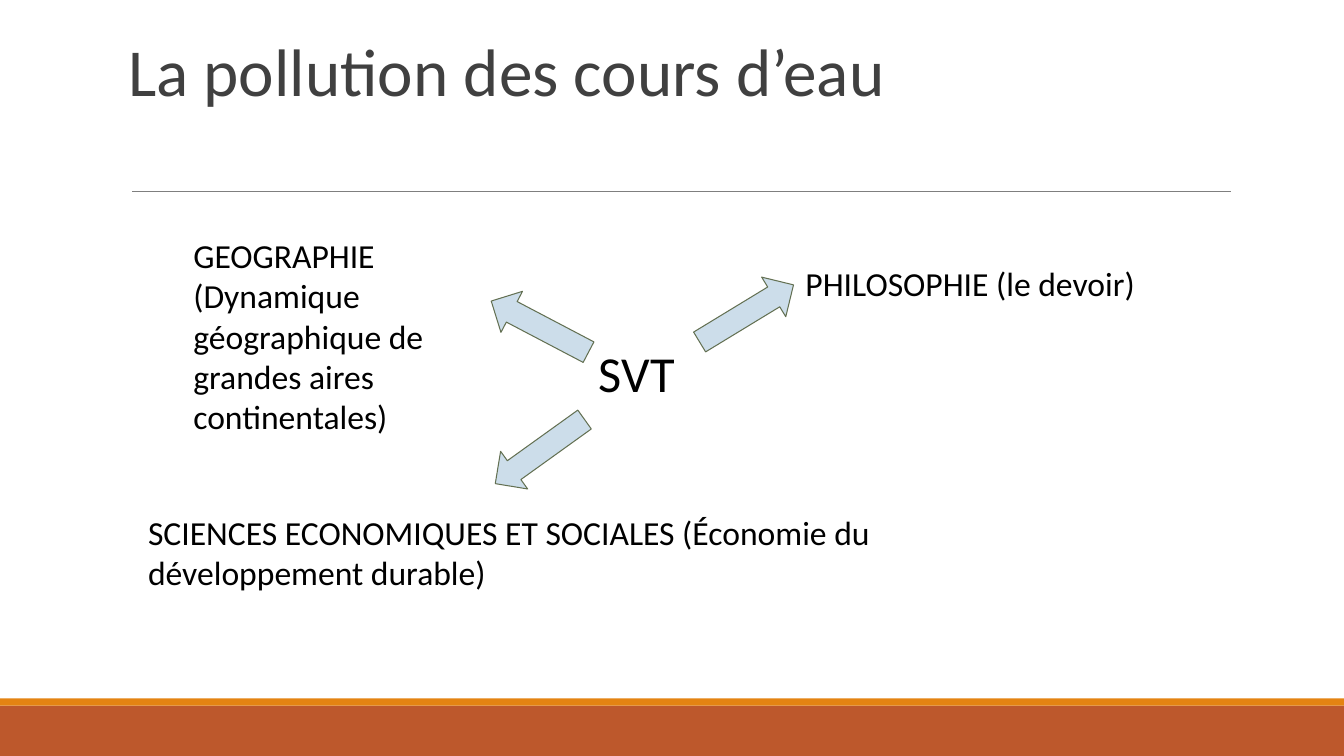
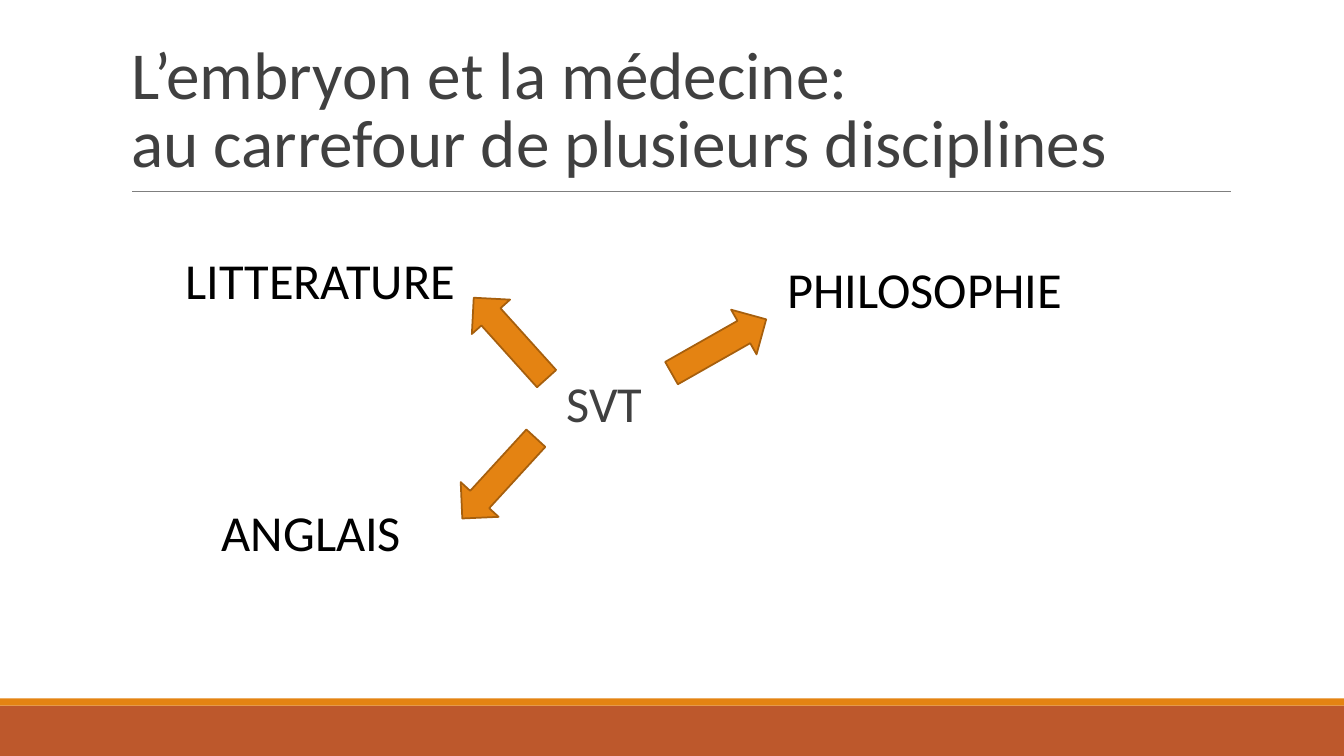
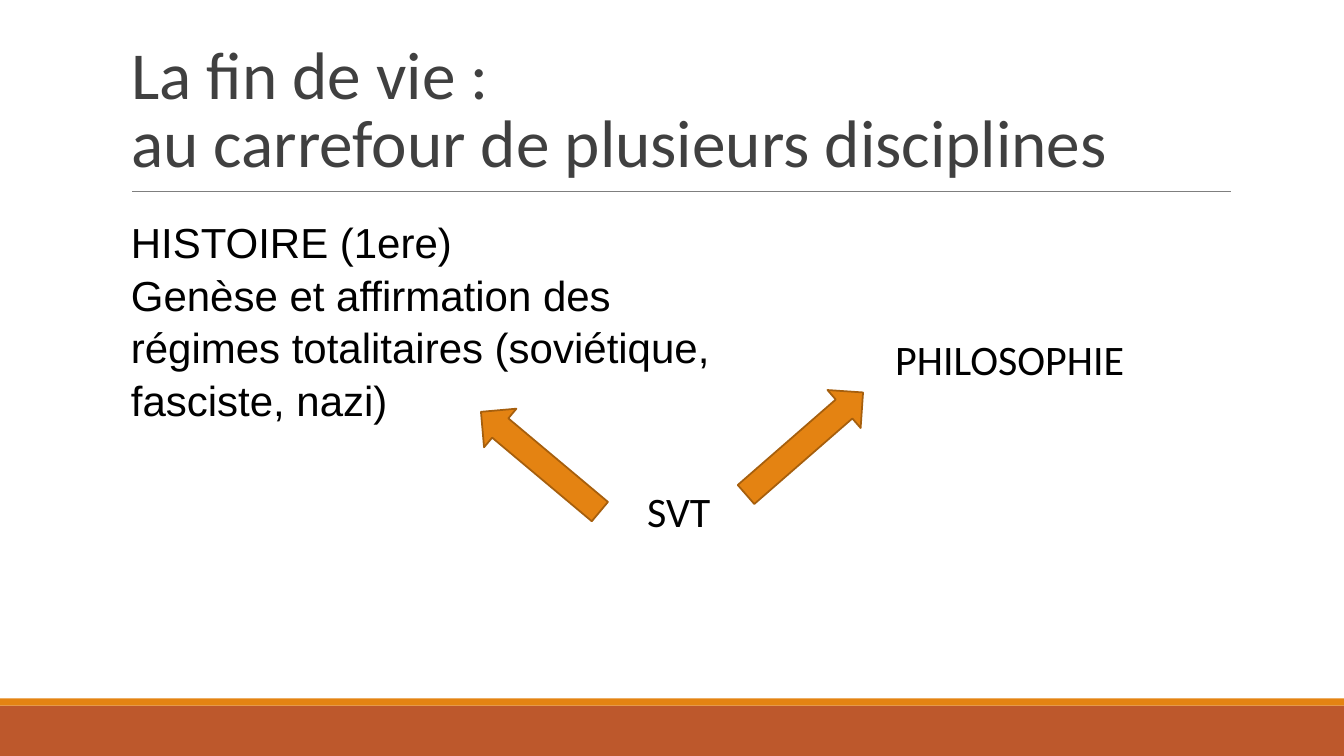
from dataclasses import dataclass

from pptx import Presentation
from pptx.dml.color import RGBColor
from pptx.enum.shapes import MSO_CONNECTOR, MSO_SHAPE
from pptx.enum.text import MSO_ANCHOR, MSO_AUTO_SIZE, PP_ALIGN
from pptx.oxml.ns import qn
from pptx.util import Inches, Pt
from lxml.etree import SubElement


@dataclass(frozen=True)
class Theme:
    rust: str = "BD582C"
    orange: str = "E48312"
    orange_edge: str = "A65F0D"
    pale_blue: str = "CCDDEA"
    green_edge: str = "637052"
    rule: str = "7F7F7F"
    title: str = "404040"
    text: str = "000000"
    font: str = "Calibri"
    plain_font: str = "Arial"
    title_size: int = 48
    large: int = 36
    medium: int = 30
    small: int = 24
    inset: float = 0.1


@dataclass(frozen=True)
class Box:
    left: float
    top: float
    width: float
    height: float

    def inside(self, left, top, width, height):
        return Box(self.left + left, self.top + top, width, height)

    def lengths(self):
        return [Inches(v) for v in (self.left, self.top, self.width, self.height)]


@dataclass(frozen=True)
class Label:
    lines: tuple
    place: tuple
    size: int
    color: str = Theme.text
    font: str = Theme.font
    spacing: float = 1.0


@dataclass(frozen=True)
class Arrows:
    size: tuple
    fill: str
    edge: str
    weight: float
    places: tuple  # left, top, rotation


THEME = Theme()
SLIDE = Box(0, 0, 13.33, 7.5)
TITLE = Box(1.2, 0.31, 11, 1.59)
CONTENT = Box(1.2, 2, 11, 4.4)


def set_all(target, values):
    for name, value in values.items():
        setattr(target, name, value)


def color(code):
    return RGBColor.from_string(code)


# Text
def write(frame, lines, size, ink, font, spacing, anchor=MSO_ANCHOR.TOP):
    inset = Inches(THEME.inset)
    set_all(frame, {
        "word_wrap": True, "auto_size": MSO_AUTO_SIZE.NONE, "vertical_anchor": anchor,
        "margin_left": inset, "margin_right": inset,
        "margin_top": inset, "margin_bottom": inset,
    })
    for number, line in enumerate(lines):
        para = frame.add_paragraph() if number else frame.paragraphs[0]
        set_all(para, {"alignment": PP_ALIGN.LEFT, "line_spacing": spacing,
                       "space_before": Pt(0), "space_after": Pt(0)})
        span = para.add_run()
        span.text = line
        set_all(span.font, {"name": font, "size": Pt(size)})
        span.font.color.rgb = color(ink)


def add_label(page, area, label):
    shape = page.shapes.add_textbox(*area.inside(*label.place).lengths())
    write(shape.text_frame, label.lines, label.size, label.color, label.font, label.spacing)


def set_title(page, lines, box):
    title = page.shapes.title
    set_all(title, dict(zip(("left", "top", "width", "height"), box.lengths())))
    write(title.text_frame, lines, THEME.title_size, THEME.title, THEME.font, 0.85,
          MSO_ANCHOR.BOTTOM)


# Shapes
def add_filled(page, kind, box, fill):
    shape = page.shapes.add_shape(kind, *box.lengths())
    shape.shadow.inherit = False
    shape.fill.solid()
    shape.fill.fore_color.rgb = color(fill)
    shape.line.fill.background()
    return shape


def add_arrows(page, area, arrows):
    for left, top, rotation in arrows.places:
        arrow = add_filled(page, MSO_SHAPE.RIGHT_ARROW,
                           area.inside(left, top, *arrows.size), arrows.fill)
        arrow.rotation = rotation
        arrow.line.color.rgb = color(arrows.edge)
        arrow.line.width = Pt(arrows.weight)


# Shared bands and title rule, kept on the layout
def add_frame(page, box):
    layout = page.slide_layout
    for holder in list(layout.placeholders)[1:]:
        layout.shapes.element.remove(holder.element)
    parts = [add_filled(page, MSO_SHAPE.RECTANGLE, box.inside(0, top, box.width, height), fill)
             for top, height, fill in ((7, 0.5, THEME.rust), (6.93, 0.07, THEME.orange))]
    rule = page.shapes.add_connector(MSO_CONNECTOR.STRAIGHT, Inches(1.31), Inches(1.9),
                                     Inches(12.21), Inches(1.9))
    rule.line.color.rgb = color(THEME.rule)
    rule.line.width = Pt(0.75)
    SubElement(rule.element.spPr, qn("a:effectLst"))
    for part in parts + [rule]:
        layout.shapes.element.append(part.element)


# One slide: a title above a subject with arrows to its neighbours
def add_crossroads(page, title, labels, arrows, title_box=TITLE, area=CONTENT):
    set_title(page, title, title_box)
    for label in labels:
        add_label(page, area, label)
    add_arrows(page, area, arrows)


def orange_arrows(size, places):
    return Arrows(size, THEME.orange, THEME.orange_edge, 1.25, places)


CROSSROADS = "au carrefour de plusieurs disciplines"

SLIDES = (
    dict(
        title=("La pollution des cours d’eau",),
        title_box=Box(1.17, 0.32, 11, 0.87),
        labels=(
            Label(("SVT",), (4.64, 1.29, 1.2, 0.93), THEME.large),
            Label(("PHILOSOPHIE (le devoir)",), (6.69, 0.51, 5, 0.93), THEME.small),
            Label(("SCIENCES ECONOMIQUES ET SOCIALES (Économie du développement durable)",),
                  (0.17, 2.98, 7.97, 0.93), THEME.small),
            Label(("GEOGRAPHIE", "(Dynamique géographique de grandes aires continentales)"),
                  (0.62, 0.23, 2.7, 2.2), THEME.small),
        ),
        arrows=Arrows((1.09, 0.46), THEME.pale_blue, THEME.green_edge, 0.75,
                      ((3.61, 2.25, 144.3), (5.66, 0.88, 328.7), (3.61, 1.01, 207.7))),
    ),
    dict(
        title=("L’embryon et la médecine:", CROSSROADS),
        labels=(
            Label(("PHILOSOPHIE",), (6.51, 0.46, 3.62, 0.86), THEME.large),
            Label(("SVT",), (4.32, 1.59, 2, 0.86), THEME.large, THEME.title),
            Label(("LITTERATURE",), (0.54, 0.37, 3.62, 0.74), THEME.large),
            Label(("ANGLAIS",), (0.9, 2.87, 2.4, 0.74), THEME.large),
        ),
        arrows=orange_arrows((1.08, 0.51), ((5.39, 1.18, 330.4), (3.32, 1.1, 228),
                                            (3.21, 2.49, 132.5))),
    ),
    dict(
        title=("La fin de vie :", CROSSROADS),
        labels=(
            Label(("HISTOIRE (1ere)", "Genèse et affirmation des",
                   "régimes totalitaires (soviétique,", "fasciste, nazi)"),
                  (0, 0.02, 6.5, 2.2), THEME.medium, font=THEME.plain_font, spacing=1.05),
            Label(("SVT",), (5.12, 2.72, 1.05, 0.71), THEME.medium),
            Label(("PHILOSOPHIE",), (7.58, 1.21, 3.05, 0.68), THEME.medium),
        ),
        arrows=orange_arrows((1.54, 0.5), ((6.01, 2.15, 318.9), (3.39, 2.33, 220))),
    ),
)


def main():
    deck = Presentation()
    set_all(deck, {"slide_width": Inches(SLIDE.width), "slide_height": Inches(SLIDE.height)})
    title_only = deck.slide_layouts[5]
    pages = [deck.slides.add_slide(title_only) for _ in SLIDES]
    add_frame(pages[0], SLIDE)
    for page, content in zip(pages, SLIDES):
        add_crossroads(page, **content)
    deck.save("out.pptx")


if __name__ == "__main__":
    main()
